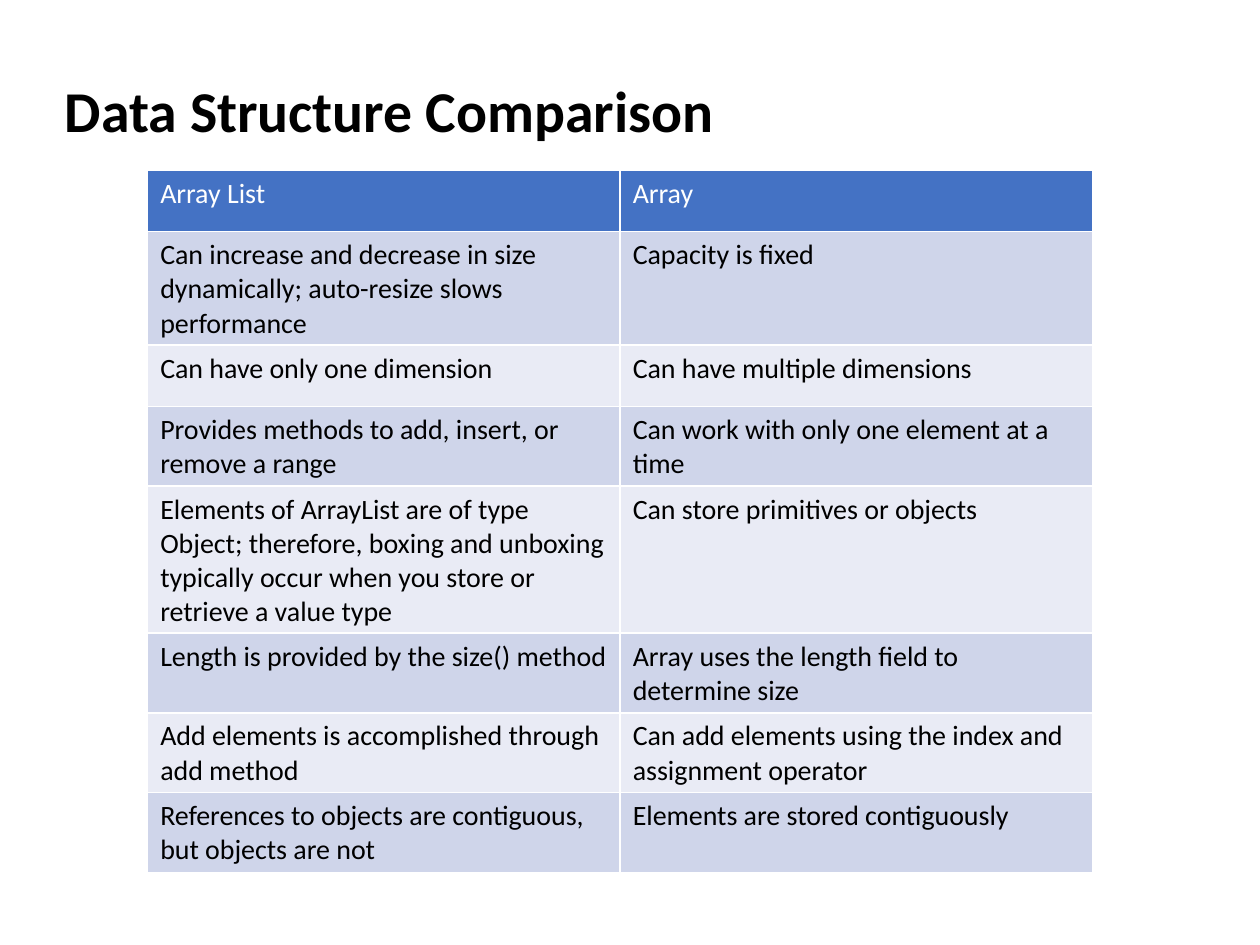
"""Build the slide that compares array lists with arrays."""
from pptx import Presentation
from pptx.dml.color import RGBColor
from pptx.enum.text import MSO_ANCHOR
from pptx.util import Pt

MIDDLE = MSO_ANCHOR.MIDDLE
COLORS = {"ink": "000000", "white": "FFFFFF", "head": "4472C4", "dark": "CFD5EA", "light": "E9EBF5"}
TITLE = {"name": "Calibri", "size": Pt(33), "bold": True}
BODY = {"name": "Calibri", "size": Pt(16), "bold": False}
ROWS = [
    (35, "Array List", "Array"),
    (60, "Can increase and decrease in size dynamically; auto-resize slows performance",
     "Capacity is fixed"),
    (35, "Can have only one dimension", "Can have multiple dimensions"),
    (42, "Provides methods to add, insert, or remove a range",
     "Can work with only one element at a time"),
    (77, "Elements of ArrayList are of type Object; therefore, boxing and unboxing "
     "typically occur when you store or retrieve a value type",
     "Can store primitives or objects"),
    (42, "Length is provided by the size() method",
     "Array uses the length field to determine size"),
    (42, "Add elements is accomplished through add method",
     "Can add elements using the index and assignment operator"),
    (42, "References to objects are contiguous, but objects are not",
     "Elements are stored contiguously"),
]


def rgb(key):
    return RGBColor.from_string(COLORS[key])


def write(frame, text, style, color):
    para = frame.paragraphs[0]
    run = para.add_run()
    run.text = text
    for name, value in style.items():
        setattr(run.font, name, value)
    run.font.color.rgb = rgb(color)
    return para


def add_title(slide, text):
    frame = slide.shapes.add_textbox(Pt(30), Pt(40.3), Pt(620.5), Pt(49)).text_frame
    frame.word_wrap = True
    frame.vertical_anchor = MIDDLE
    write(frame, text, TITLE, "ink").line_spacing = 0.9


def fill_cell(cell, text, fill, color):
    cell.fill.solid()
    cell.fill.fore_color.rgb = rgb(fill)
    write(cell.text_frame, text, BODY, color)


def add_grid(slide, rows):
    total = sum(row[0] for row in rows)
    grid = slide.shapes.add_table(len(rows), 2, Pt(84.4), Pt(97.4), Pt(540), Pt(total)).table
    for i, (height, *texts) in enumerate(rows):
        grid.rows[i].height = Pt(height)
        band = "dark" if i % 2 else "light"
        fill, color = (band, "ink") if i else ("head", "white")
        for j, text in enumerate(texts):
            fill_cell(grid.cell(i, j), text, fill, color)


def main():
    deck = Presentation()
    deck.slide_width, deck.slide_height = Pt(720), Pt(540)
    slide = deck.slides.add_slide(deck.slide_layouts[6])
    add_title(slide, "Data Structure Comparison")
    add_grid(slide, ROWS)
    deck.save("out.pptx")


if __name__ == "__main__":
    main()
